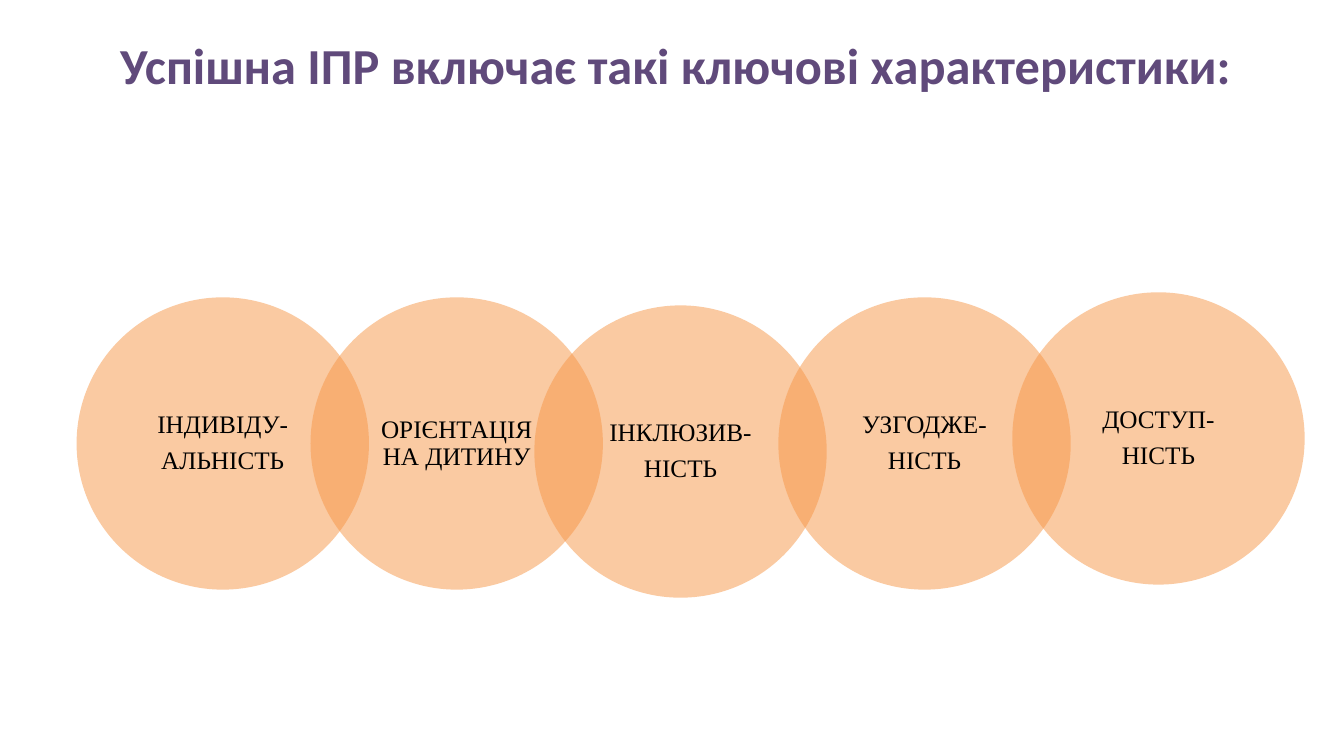
from lxml import etree
from pptx import Presentation
from pptx import util as u
from pptx.dml.color import RGBColor
from pptx.enum import shapes, text
from pptx.oxml import ns

COLORS = {"title": "604A7B", "circle": "F79646", "label": "000000"}
DIAMETER = u.Inches(2.9)
CIRCLES = [
    (0.76, 2.95, "ІНДИВІДУ-\nАЛЬНІСТЬ"),
    (3.08, 2.95, "ОРІЄНТАЦІЯ НА ДИТИНУ"),
    (5.3, 3.03, "ІНКЛЮЗИВ-\nНІСТЬ"),
    (7.72, 2.95, "УЗГОДЖЕ-\nНІСТЬ"),
    (10.04, 2.9, "ДОСТУП-\nНІСТЬ"),
]


def format_text(frame, font_name, size, color, bold=False):
    frame.word_wrap = True
    frame.auto_size = text.MSO_AUTO_SIZE.NONE
    frame.vertical_anchor = text.MSO_ANCHOR.MIDDLE
    for para in frame.paragraphs:
        para.alignment = text.PP_ALIGN.CENTER
        for span in para.runs:
            span.font.name = font_name
            span.font.size = u.Pt(size)
            span.font.bold = bold
            span.font.color.rgb = RGBColor.from_string(COLORS[color])


deck = Presentation()
deck.slide_width = u.Inches(13.33)
deck.slide_height = u.Inches(7.5)
page = deck.slides.add_slide(deck.slide_layouts[0])
subtitle = page.placeholders[1].element
subtitle.getparent().remove(subtitle)

title = page.shapes.title
title.left, title.top = u.Inches(1.04), u.Inches(0.17)
title.width, title.height = u.Inches(11.33), u.Inches(0.93)
title.text_frame.text = "Успішна ІПР включає такі ключові характеристики:"
format_text(title.text_frame, "Calibri", 36, "title", True)

for left, top, label in CIRCLES:
    circle = page.shapes.add_shape(
        shapes.MSO_SHAPE.OVAL, u.Inches(left), u.Inches(top), DIAMETER, DIAMETER
    )
    circle.shadow.inherit = False
    circle.line.fill.background()
    circle.fill.solid()
    circle.fill.fore_color.rgb = RGBColor.from_string(COLORS["circle"])
    tint = circle.element.spPr.find(".//" + ns.qn("a:srgbClr"))
    etree.SubElement(tint, ns.qn("a:alpha"), val="50000")

    frame = circle.text_frame
    frame.text = label
    frame.margin_left = frame.margin_right = u.Inches(0.16)
    frame.margin_top = frame.margin_bottom = u.Inches(0.03)
    format_text(frame, "Times New Roman", 18, "label")
    for para in frame.paragraphs:
        para.line_spacing = 0.9
        para.space_after = u.Pt(6.3)

deck.save("out.pptx")
